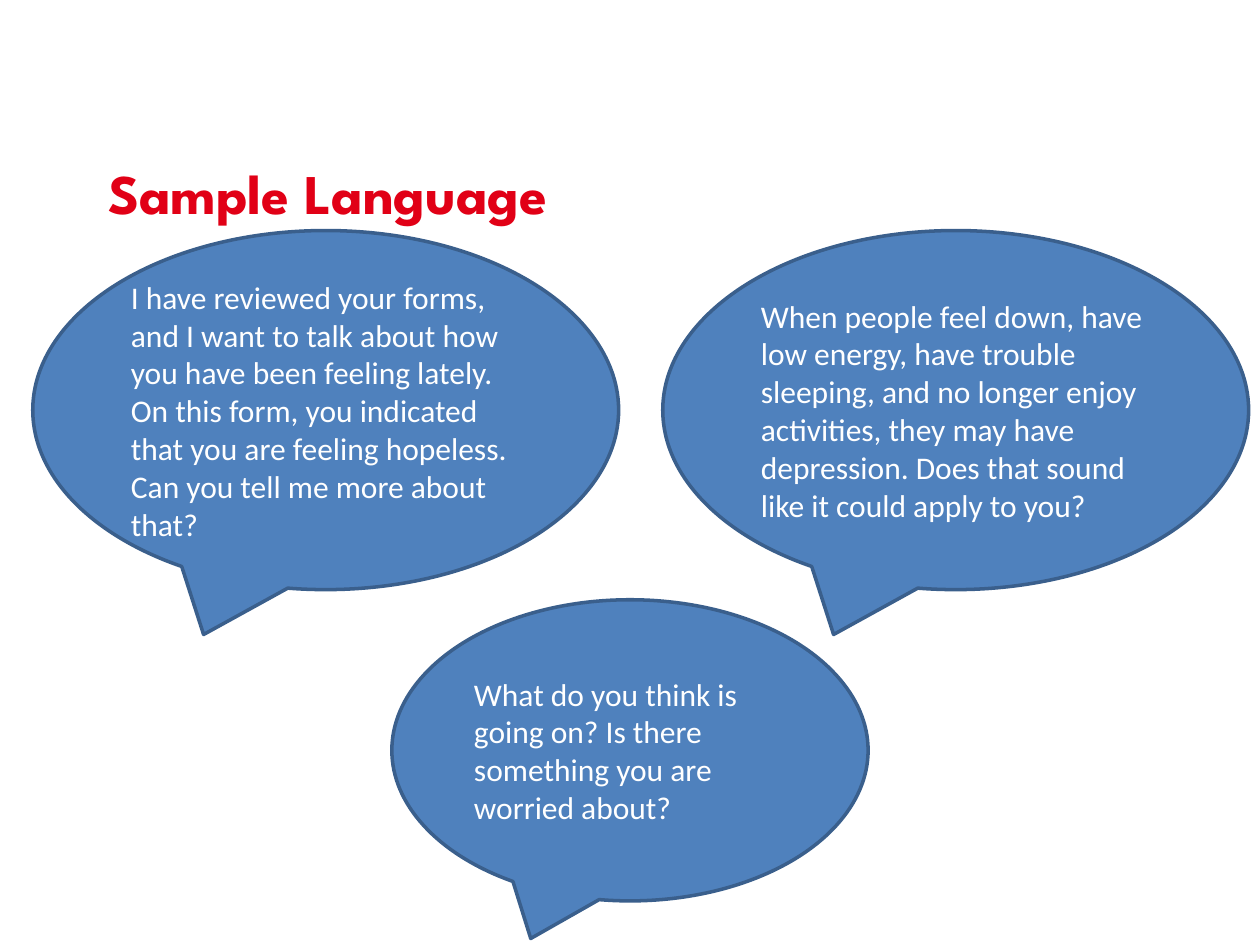
from dataclasses import dataclass

from pptx import Presentation
from pptx.dml.color import RGBColor
from pptx.enum.shapes import MSO_SHAPE
from pptx.enum.text import MSO_ANCHOR, PP_ALIGN
from pptx.slide import Slide
from pptx.text.text import TextFrame
from pptx.util import Inches, Pt


@dataclass(frozen=True)
class SpeechBubble:
    """A callout with its place in inches and its words."""

    left: float
    top: float
    width: float
    height: float
    text: str


BUBBLES = [
    SpeechBubble(
        0.26, 1.83, 4.65, 2.85,
        "I have reviewed your forms, and I want to talk about how you have been "
        "feeling lately. On this form, you indicated that you are feeling hopeless. "
        "Can you tell me more about that?",
    ),
    SpeechBubble(
        5.26, 1.83, 4.65, 2.85,
        "When people feel down, have low energy, have trouble sleeping, and no longer "
        "enjoy activities, they may have depression. Does that sound like it could "
        "apply to you?",
    ),
    SpeechBubble(
        3.11, 4.76, 3.78, 2.39,
        "What do you think is going on? Is there something you are worried about?",
    ),
]


def color(value: str) -> RGBColor:
    """Turn a hex string into a colour."""
    return RGBColor.from_string(value)


def write_text(
    frame: TextFrame,
    text: str,
    *,
    size: float,
    font: str,
    fill: str,
    bold: bool = False,
    anchor: MSO_ANCHOR = MSO_ANCHOR.TOP,
) -> None:
    """Fill a text frame with one left-aligned, formatted paragraph."""
    frame.word_wrap = True
    frame.vertical_anchor = anchor
    paragraph = frame.paragraphs[0]
    paragraph.alignment = PP_ALIGN.LEFT
    run = paragraph.add_run()
    run.text = text
    run.font.size = Pt(size)
    run.font.name = font
    run.font.bold = bold
    run.font.color.rgb = color(fill)


def draw_bubble(slide: Slide, bubble: SpeechBubble) -> None:
    """Draw one speech bubble with its words."""
    shape = slide.shapes.add_shape(
        MSO_SHAPE.OVAL_CALLOUT,
        Inches(bubble.left),
        Inches(bubble.top),
        Inches(bubble.width),
        Inches(bubble.height),
    )
    shape.shadow.inherit = False
    shape.fill.solid()
    shape.fill.fore_color.rgb = color("4F81BD")
    shape.line.color.rgb = color("3A5F8C")
    shape.line.width = Pt(2)
    write_text(
        shape.text_frame,
        bubble.text,
        size=18,
        font="Calibri",
        fill="FFFFFF",
        anchor=MSO_ANCHOR.MIDDLE,
    )


def main() -> None:
    """Build the slide and save it."""
    presentation = Presentation()
    presentation.slide_width = Inches(10)
    presentation.slide_height = Inches(7.5)
    slide = presentation.slides.add_slide(presentation.slide_layouts[6])
    title = slide.shapes.add_textbox(
        Inches(0.76), Inches(1.21), Inches(11.84), Inches(0.54)
    )
    write_text(
        title.text_frame,
        "Sample Language",
        size=32,
        font="League Spartan",
        fill="E10016",
        bold=True,
    )
    for bubble in BUBBLES:
        draw_bubble(slide, bubble)
    presentation.save("out.pptx")


if __name__ == "__main__":
    main()
